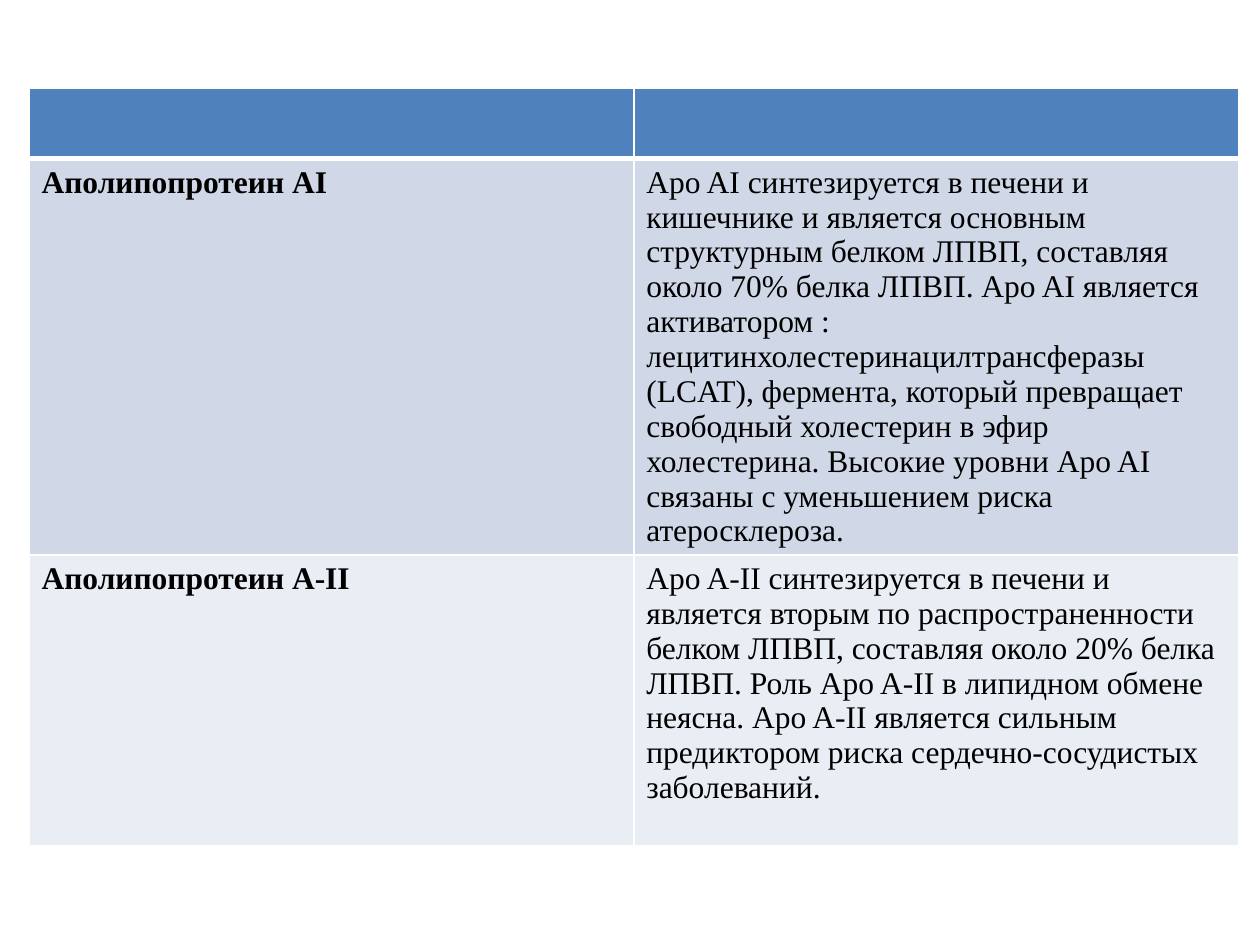
from lxml.etree import SubElement
from pptx import Presentation
from pptx.dml.color import RGBColor
from pptx.oxml.ns import qn
from pptx.util import Inches, Pt

FONT = "Times New Roman"
HEADER_FILL = "4F81BD"
BORDER_COLOR = "FFFFFF"
ROW_HEIGHTS = (0.56, 3.14, 2.31)
COLUMN_WIDTH = 4.8

APOLIPOPROTEINS = (
    (
        "Аполипопротеин AI",
        "Apo AI синтезируется в печени и кишечнике и является основным "
        "структурным белком ЛПВП, составляя около 70% белка ЛПВП. Apo AI "
        "является активатором : лецитинхолестеринацилтрансферазы (LCAT), "
        "фермента, который превращает свободный холестерин в эфир "
        "холестерина. Высокие уровни Apo AI связаны с уменьшением риска "
        "атеросклероза.",
        "D0D8E8",
    ),
    (
        "Аполипопротеин А-II",
        "Apo A-II синтезируется в печени и является вторым по "
        "распространенности белком ЛПВП, составляя около 20% белка ЛПВП. "
        "Роль Apo A-II в липидном обмене неясна. Apo A-II является сильным "
        "предиктором риска сердечно-сосудистых заболеваний.",
        "E9EDF4",
    ),
)


def color(value):
    return RGBColor.from_string(value)


def set_borders(cell, top=1, bottom=1):
    """Draw all four cell borders; widths are in points."""
    properties = cell._tc.get_or_add_tcPr()
    widths = {"a:lnL": 1, "a:lnR": 1, "a:lnT": top, "a:lnB": bottom}
    for index, (tag, width) in enumerate(widths.items()):
        line = SubElement(properties, qn(tag), w=str(Pt(width)))
        fill = SubElement(line, qn("a:solidFill"))
        SubElement(fill, qn("a:srgbClr"), val=BORDER_COLOR)
        properties.insert(index, line)


def fill_cell(cell, fill):
    cell.fill.solid()
    cell.fill.fore_color.rgb = color(fill)


def write_cell(cell, text, bold):
    run = cell.text_frame.paragraphs[0].add_run()
    run.text = text
    run.font.name = FONT
    run.font.size = Pt(18)
    run.font.bold = bold
    run.font.color.rgb = color("000000")


def add_apolipoprotein_table(slide):
    frame = slide.shapes.add_table(
        len(ROW_HEIGHTS), 2, Inches(0.23), Inches(0.7),
        Inches(2 * COLUMN_WIDTH), Inches(sum(ROW_HEIGHTS)),
    )
    table = frame.table
    for column in table.columns:
        column.width = Inches(COLUMN_WIDTH)
    for row, height in zip(table.rows, ROW_HEIGHTS):
        row.height = Inches(height)

    for cell in table.rows[0].cells:
        fill_cell(cell, HEADER_FILL)
        set_borders(cell, bottom=3)
    for index, (name, description, fill) in enumerate(APOLIPOPROTEINS, start=1):
        for column, text in enumerate((name, description)):
            cell = table.cell(index, column)
            fill_cell(cell, fill)
            set_borders(cell, top=3 if index == 1 else 1)
            write_cell(cell, text, bold=column == 0)


def main():
    presentation = Presentation()
    presentation.slide_width = Inches(10)
    presentation.slide_height = Inches(7.5)
    slide = presentation.slides.add_slide(presentation.slide_layouts[6])
    add_apolipoprotein_table(slide)
    presentation.save("out.pptx")


if __name__ == "__main__":
    main()
